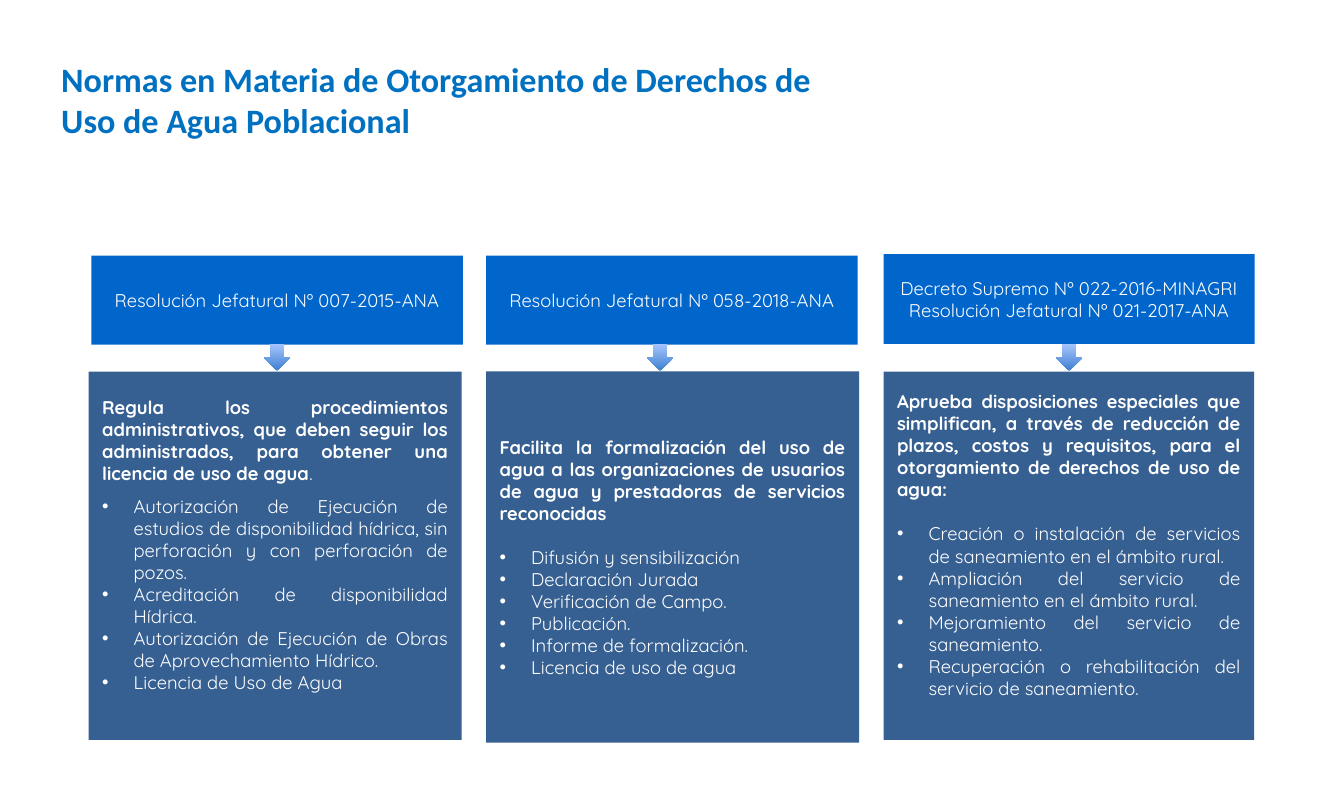
from pptx import Presentation
from pptx.dml.color import RGBColor
from pptx.enum.shapes import MSO_SHAPE as Shape
from pptx.enum.text import MSO_ANCHOR as Anchor, PP_ALIGN as Align
from pptx.util import Pt
from lxml import etree

INK = {"title": "0070C0", "head": "0066CC", "body": "376092",
       "text": "FFFFFF", "dark": "3F80CE", "light": "A4C4FF"}
INK = {name: RGBColor.from_string(code) for name, code in INK.items()}
TEXT = {"name": "Quicksand", "size": Pt(9.7), "bold": False}
HANG = 16.6

COLS = [
    {"head": ["Resolución Jefatural Nº 007-2015-ANA"],
     "head_box": (48.2, 134.8, 195.8, 47), "body_box": (46.8, 195.9, 196.6, 194.2),
     "arrow": 139, "gap": 6, "foot": 15.2,
     "lead": "Regula los procedimientos administrativos, que deben seguir los "
             "administrados, para obtener una licencia de uso de agua",
     "stop": ".",
     "items": ["Autorización de Ejecución de estudios de disponibilidad hídrica, "
               "sin perforación y con perforación de pozos.",
               "Acreditación de disponibilidad Hídrica.",
               "Autorización de Ejecución de Obras de Aprovechamiento Hídrico.",
               "Licencia de Uso de Agua"]},
    {"head": ["Resolución Jefatural Nº 058-2018-ANA"],
     "head_box": (256.3, 134.8, 195.8, 47), "body_box": (256.3, 195.9, 196.6, 195.7),
     "arrow": 341, "gap": 11.6, "foot": 3.6,
     "lead": "Facilita la formalización del uso de agua a las organizaciones de "
             "usuarios de agua y prestadoras de servicios reconocidas",
     "stop": "",
     "items": ["Difusión y sensibilización", "Declaración Jurada",
               "Verificación de Campo.", "Publicación.",
               "Informe de formalización.", "Licencia de uso de agua"]},
    {"head": ["Decreto Supremo Nº 022-2016-MINAGRI",
              "Resolución Jefatural Nº 021-2017-ANA"],
     "head_box": (465.8, 134, 195.6, 47.4), "body_box": (465.8, 195.9, 195.4, 194.2),
     "arrow": 556.6, "gap": 11.6, "foot": 15.2,
     "lead": "Aprueba disposiciones especiales que simplifican, a través de "
             "reducción de plazos, costos y requisitos, para el otorgamiento "
             "de derechos de uso de agua:",
     "stop": "",
     "items": ["Creación o instalación de servicios de saneamiento en el ámbito rural.",
               "Ampliación del servicio de saneamiento en el ámbito rural.",
               "Mejoramiento del servicio de saneamiento.",
               "Recuperación o rehabilitación del servicio de saneamiento."]},
]

deck = Presentation()
deck.slide_width, deck.slide_height = Pt(708.5), Pt(425.5)
slide = deck.slides.add_slide(deck.slide_layouts[6])


def add_box(kind, box, color=None):
    shape = slide.shapes.add_shape(kind, *map(Pt, box))
    shape.shadow.inherit = False
    shape.line.fill.background()
    if color:
        shape.fill.solid()
        shape.fill.fore_color.rgb = INK[color]
    frame = shape.text_frame
    frame.word_wrap = True
    frame.vertical_anchor = Anchor.MIDDLE
    return shape


def add_run(par, text, color="text", **extra):
    run = par.add_run()
    run.text = text
    for key, value in {**TEXT, **extra}.items():
        setattr(run.font, key, value)
    run.font.color.rgb = INK[color]


title = slide.shapes.add_textbox(Pt(25.2), Pt(27.4), Pt(428.4), Pt(51)).text_frame
title.word_wrap = True
add_run(title.paragraphs[0],
        "Normas en Materia de Otorgamiento de Derechos de Uso de Agua Poblacional",
        "title", name="Calibri", size=Pt(18), bold=True)

for col in COLS:
    frame = add_box(Shape.RECTANGLE, col["body_box"], "body").text_frame
    frame.margin_bottom = Pt(col["foot"])
    lead = frame.paragraphs[0]
    lead.alignment = Align.JUSTIFY
    add_run(lead, col["lead"], bold=True)
    if col["stop"]:
        add_run(lead, col["stop"])
    for i, item in enumerate(col["items"]):
        par = frame.add_paragraph()
        par.alignment = Align.JUSTIFY
        par.space_before = Pt(0 if i else col["gap"])
        props = par._p.get_or_add_pPr()
        props.set("marL", str(Pt(HANG)))
        props.set("indent", str(-Pt(HANG)))
        space = props.tag.split("}")[0] + "}"
        etree.SubElement(props, space + "buFont", typeface="Arial")
        etree.SubElement(props, space + "buChar", char="•")
        add_run(par, item)

    frame = add_box(Shape.RECTANGLE, col["head_box"], "head").text_frame
    for i, line in enumerate(col["head"]):
        par = frame.add_paragraph() if i else frame.paragraphs[0]
        par.alignment = Align.CENTER
        add_run(par, line)

    arrow = add_box(Shape.DOWN_ARROW, (col["arrow"], 181.6, 14, 14))
    arrow.fill.gradient()
    arrow.fill.gradient_angle = 90
    for stop, name in zip(arrow.fill.gradient_stops, ("dark", "light")):
        stop.color.rgb = INK[name]

deck.save("out.pptx")
